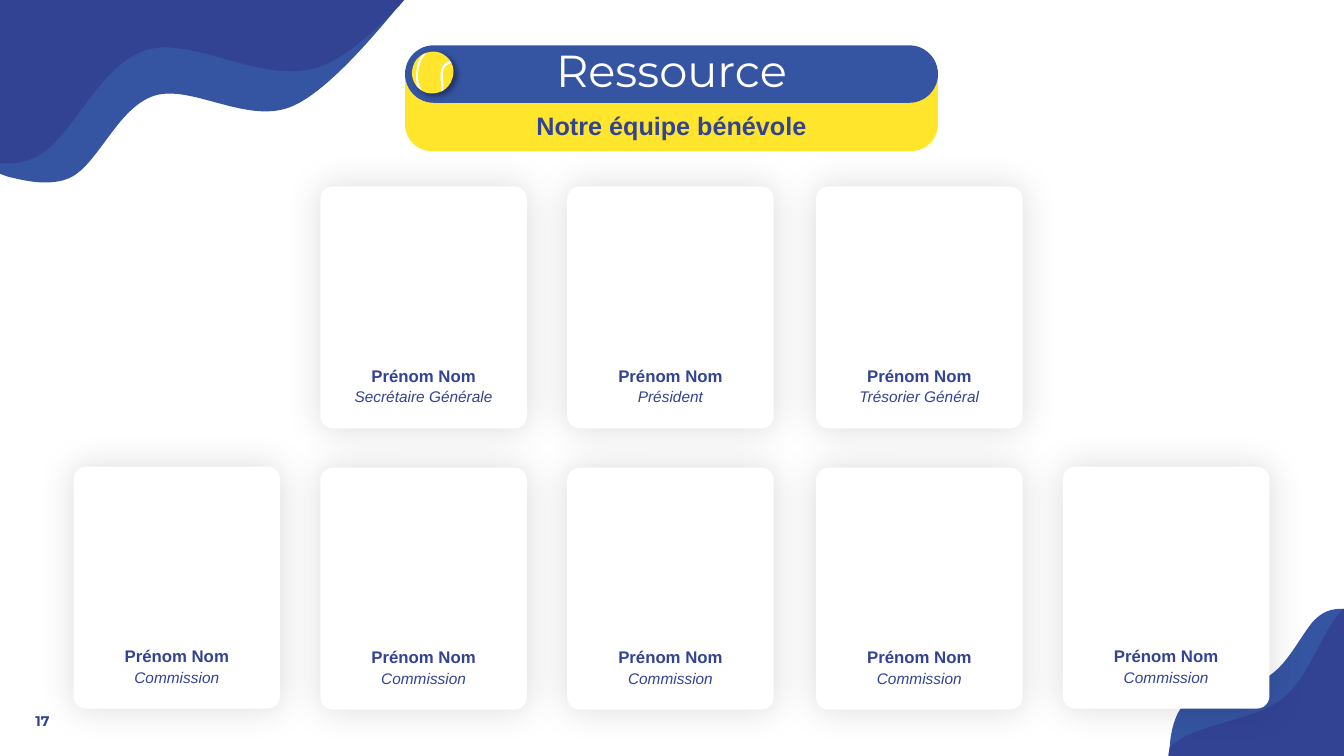
"""Build the volunteer team slide: title banner, eight member cards and corner waves."""
import lxml.etree
import pptx
import pptx.dml.color
import pptx.enum.shapes
import pptx.enum.text
import pptx.oxml.ns
import pptx.util

Inches = pptx.util.Inches
RGBColor = pptx.dml.color.RGBColor
Shape = pptx.enum.shapes.MSO_SHAPE
Align = pptx.enum.text.PP_ALIGN
Anchor = pptx.enum.text.MSO_ANCHOR
qn = pptx.oxml.ns.qn

NAVY = RGBColor(0x33, 0x43, 0x94)
BLUE = RGBColor(0x35, 0x54, 0xA2)
YELLOW = RGBColor(0xFF, 0xE5, 0x2C)
WHITE = RGBColor(0xFF, 0xFF, 0xFF)

WIDTH, HEIGHT = 13.34, 7.5


def paint(shape, color, shadow=None):
    """Fill a shape without outline; shadow is (opacity %, blur pt, distance pt, angle)."""
    shape.fill.solid()
    shape.fill.fore_color.rgb = color
    shape.line.fill.background()
    shape.shadow.inherit = False
    if shadow:
        opacity, blur, distance, angle = shadow
        effects = shape._element.spPr.find(qn("a:effectLst"))
        outer = lxml.etree.SubElement(
            effects, qn("a:outerShdw"), blurRad=str(pptx.util.Pt(blur)),
            dist=str(pptx.util.Pt(distance)), dir=str(angle * 60000),
            algn="ctr", rotWithShape="0")
        black = lxml.etree.SubElement(outer, qn("a:srgbClr"), val="000000")
        lxml.etree.SubElement(black, qn("a:alpha"), val=str(opacity * 1000))


def draw_outline(color, start, *segments, shadow=None):
    """Draw a closed outline; two numbers make a line, six make a Bézier curve."""
    points = [(Inches(x), Inches(y))
              for segment in segments for x, y in zip(segment[::2], segment[1::2])]
    builder = slide.shapes.build_freeform(Inches(start[0]), Inches(start[1]), scale=1.0)
    builder.add_line_segments(points, close=True)
    outline = builder.convert_to_shape()
    lines = iter(list(outline._element.iter(qn("a:lnTo"))))
    for segment in segments:
        first = next(lines)
        if len(segment) == 6:
            curve = lxml.etree.Element(qn("a:cubicBezTo"))
            first.addprevious(curve)
            for line in (first, next(lines), next(lines)):
                curve.append(line[0])
                line.getparent().remove(line)
    paint(outline, color, shadow)


deck = pptx.Presentation()
deck.slide_width, deck.slide_height = Inches(WIDTH), Inches(HEIGHT)
slide = deck.slides.add_slide(deck.slide_layouts[6])

draw_outline(
    BLUE, (3.96, 0.06), (3.95, 0.07, 3.95, 0.07, 3.94, 0.08),
    (3.66, 0.42, 3.23, 0.91, 2.91, 1.05), (2.47, 1.25, 1.9, 0.83, 1.53, 0.95),
    (1.16, 1.07, 0.97, 1.65, 0.68, 1.77), (0.61, 1.8, 0.53, 1.81, 0.44, 1.81),
    (0.32, 1.81, 0.19, 1.78, 0.07, 1.75), (-0.01, 1.72), (-0.01, -0.01), (4.02, -0.01))
draw_outline(
    NAVY, (4.02, -0.01), (3.96, 0.06), (3.95, 0.07, 3.95, 0.07, 3.94, 0.08),
    (3.7, 0.33, 3.45, 0.54, 3.23, 0.64), (2.66, 0.89, 1.92, 0.34, 1.44, 0.5),
    (0.96, 0.66, 0.7, 1.42, 0.33, 1.57), (0.24, 1.61, 0.13, 1.63, 0.03, 1.62),
    (0.01, 1.62, 0, 1.62, -0.01, 1.62), (-0.01, -0.01))
draw_outline(
    BLUE, (13.33, 6.04), (13.32, 6.04), (13.25, 6.04, 13.16, 6.05, 13.07, 6.13),
    (12.94, 6.24, 12.81, 6.57, 12.59, 6.71), (12.37, 6.86, 11.92, 6.83, 11.76, 6.98),
    (11.66, 7.08, 11.62, 7.26, 11.61, 7.42), (11.61, 7.44, 11.6, 7.46, 11.6, 7.48),
    (11.6, HEIGHT), (WIDTH, HEIGHT), (WIDTH, 6.04))
draw_outline(
    NAVY, (11.6, HEIGHT), (WIDTH, HEIGHT), (WIDTH, 6.04), (13.33, 6.04),
    (13.32, 6.05, 13.31, 6.06, 13.3, 6.08), (13.13, 6.25, 13, 6.72, 12.72, 6.94),
    (12.44, 7.16, 11.82, 7.18, 11.61, 7.42), (11.61, 7.44, 11.6, 7.46, 11.6, 7.48))

CARD_WIDTH, CARD_HEIGHT = 2.05, 2.4
COLUMNS = (0.73, 3.18, 5.63, 8.1, 10.55)
FIRST_ROW, ROW_PITCH = 1.85, 2.79
OUTER_LIFT = 0.01
NAME_OFFSET, ROLE_OFFSET = 1.73, 1.94
members = [
    (0, 1, "Secrétaire Générale"), (0, 2, "Président"), (0, 3, "Trésorier Général"),
    *((1, column, "Commission") for column in range(len(COLUMNS))),
]
BANNER_LEFT, BANNER_WIDTH = 4.02, 5.29

texts = [
    ("17", 0.19, 7.02, 0.4, 0.3, 10, "Montserrat", NAVY, True, False, Align.RIGHT, Anchor.TOP),
    ("Ressource", BANNER_LEFT, 0.37, BANNER_WIDTH, 0.64, 32, "Montserrat", WHITE,
     False, False, Align.CENTER, Anchor.TOP),
    ("Notre équipe bénévole", BANNER_LEFT, 1.05, BANNER_WIDTH, 0.4, 18, "Arial", NAVY,
     True, False, Align.CENTER, Anchor.TOP),
]
for row, column, role in members:
    left = COLUMNS[column]
    top = FIRST_ROW + row * ROW_PITCH
    if column in (0, len(COLUMNS) - 1):
        top -= OUTER_LIFT
    card = slide.shapes.add_shape(
        Shape.ROUNDED_RECTANGLE, Inches(left), Inches(top),
        Inches(CARD_WIDTH), Inches(CARD_HEIGHT))
    card.adjustments[0] = 0.06
    paint(card, WHITE, (14, 26, 0, 0))
    texts += [
        ("Prénom Nom", left, top + NAME_OFFSET, CARD_WIDTH, 0.3, 12, "Arial", NAVY,
         True, False, Align.CENTER, Anchor.MIDDLE),
        (role, left, top + ROLE_OFFSET, CARD_WIDTH, 0.29, 11, "Arial", NAVY,
         False, True, Align.CENTER, Anchor.MIDDLE),
    ]

for top, height, rounding, color in ((0.51, 0.99, 0.27, YELLOW), (0.45, 0.57, 0.5, BLUE)):
    banner = slide.shapes.add_shape(
        Shape.ROUNDED_RECTANGLE, Inches(BANNER_LEFT), Inches(top),
        Inches(BANNER_WIDTH), Inches(height))
    banner.adjustments[0] = rounding
    paint(banner, color)

draw_outline(
    YELLOW, (4.36, 0.52), (4.47, 0.56, 4.53, 0.67, 4.49, 0.78),
    (4.46, 0.89, 4.34, 0.95, 4.23, 0.92), (4.13, 0.89, 4.06, 0.77, 4.1, 0.66),
    (4.13, 0.55, 4.25, 0.49, 4.36, 0.52), shadow=(40, 4, 3, 45))
draw_outline(
    WHITE, (4.17, 0.63), (4.19, 0.58, 4.21, 0.55, 4.23, 0.53),
    (4.21, 0.53, 4.2, 0.54, 4.19, 0.55), (4.18, 0.57, 4.16, 0.59, 4.15, 0.62),
    (4.14, 0.66, 4.13, 0.71, 4.13, 0.75), (4.13, 0.79, 4.13, 0.82, 4.14, 0.86),
    (4.15, 0.87, 4.17, 0.88, 4.18, 0.89), (4.14, 0.8, 4.14, 0.72, 4.17, 0.63))
draw_outline(
    WHITE, (4.4, 0.83), (4.4, 0.79, 4.39, 0.74, 4.4, 0.7),
    (4.41, 0.66, 4.43, 0.64, 4.47, 0.63), (4.47, 0.63, 4.48, 0.62, 4.48, 0.62),
    (4.48, 0.62, 4.47, 0.61, 4.47, 0.61), (4.47, 0.61, 4.46, 0.61, 4.46, 0.61),
    (4.42, 0.62, 4.39, 0.65, 4.38, 0.69), (4.37, 0.74, 4.37, 0.79, 4.38, 0.83),
    (4.38, 0.86, 4.38, 0.89, 4.38, 0.91), (4.39, 0.9, 4.4, 0.9, 4.4, 0.9),
    (4.4, 0.88, 4.4, 0.85, 4.4, 0.83))

for words, left, top, width, height, size, font, color, bold, italic, align, anchor in texts:
    frame = slide.shapes.add_textbox(
        Inches(left), Inches(top), Inches(width), Inches(height)).text_frame
    frame.word_wrap = True
    frame.vertical_anchor = anchor
    frame.text = words
    paragraph = frame.paragraphs[0]
    paragraph.alignment = align
    style = paragraph.runs[0].font
    style.name, style.size = font, pptx.util.Pt(size)
    style.bold, style.italic = bold, italic
    style.color.rgb = color

deck.save("out.pptx")
